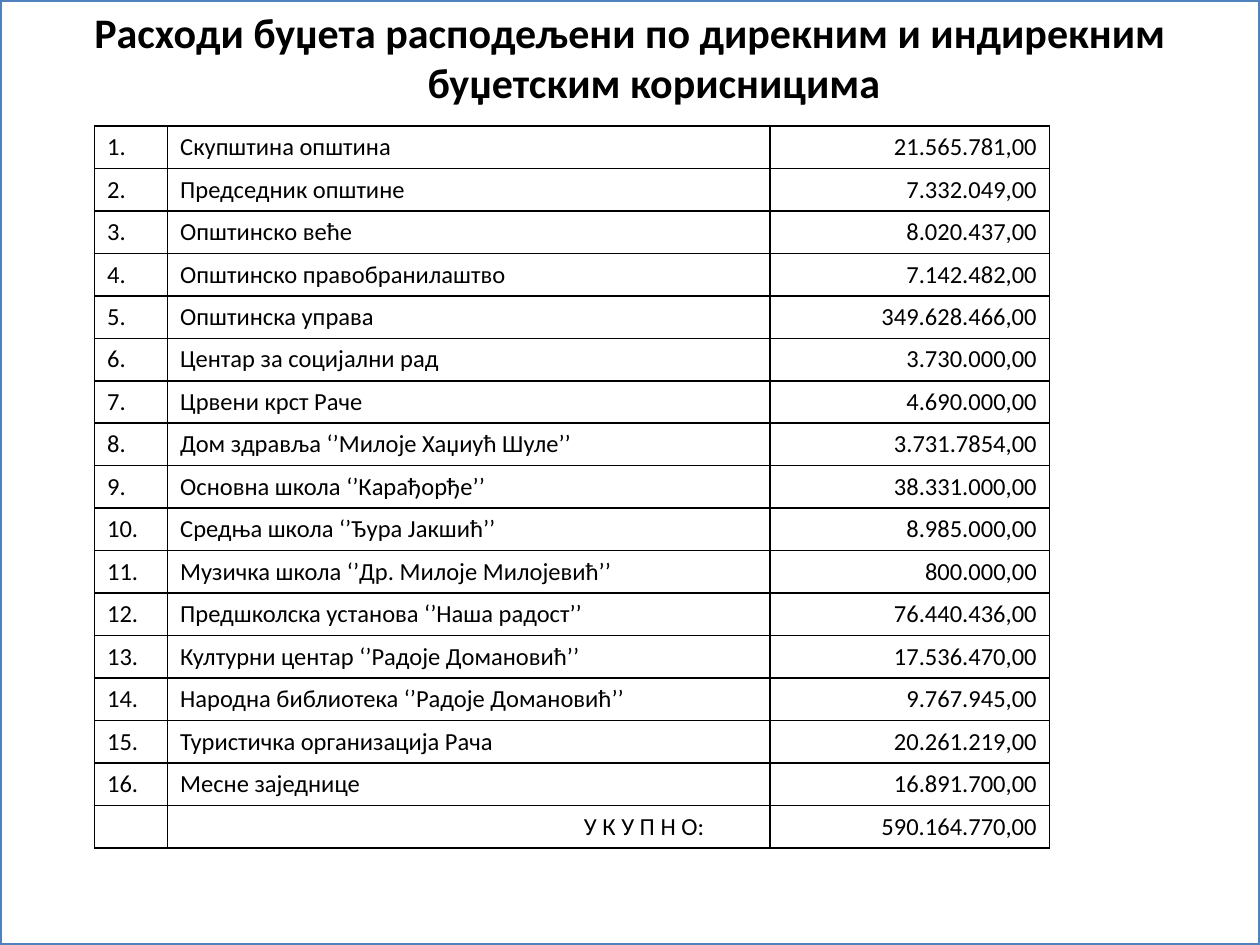
from dataclasses import dataclass

from lxml.etree import SubElement
from pptx import Presentation
from pptx.dml.color import RGBColor
from pptx.enum.shapes import MSO_SHAPE
from pptx.enum.text import MSO_ANCHOR, PP_ALIGN
from pptx.oxml.ns import qn
from pptx.util import Inches, Pt


@dataclass(frozen=True)
class Theme:
    font: str = "Calibri"
    ink: str = "000000"
    paper: str = "FFFFFF"
    frame: str = "4F81BD"
    title_size: int = 24
    cell_size: int = 14
    frame_width: int = 2
    rule_width: int = 1


THEME = Theme()
SLIDE_W, SLIDE_H = Inches(10), Inches(7.5)
TABLE_LEFT, TABLE_TOP = Inches(0.75), Inches(1)
COLUMNS = [Inches(w) for w in (0.58, 4.78, 2.22)]
ROW_H = Inches(0.33)
HANGING = Inches(0.38)
TOTAL_INSET = Inches(0.52)

TITLE = "Расходи буџета расподељени по дирекним и индирекним буџетским корисницима"
TOTAL = ("У К У П Н О:", "590.164.770,00")
EXPENSES = [
    ("Скупштина општина", "21.565.781,00"),
    ("Председник општине", "7.332.049,00"),
    ("Општинско веће", "8.020.437,00"),
    ("Општинско правобранилаштво", "7.142.482,00"),
    ("Општинска управа", "349.628.466,00"),
    ("Центар за социјални рад", "3.730.000,00"),
    ("Црвени крст Раче", "4.690.000,00"),
    ("Дом здравља ‘’Милоје Хаџиућ Шуле’’", "3.731.7854,00"),
    ("Основна школа ‘’Карађорђе’’", "38.331.000,00"),
    ("Средња школа ‘’Ђура Јакшић’’", "8.985.000,00"),
    ("Музичка школа ‘’Др. Милоје Милојевић’’", "800.000,00"),
    ("Предшколска установа ‘’Наша радост’’", "76.440.436,00"),
    ("Културни центар ‘’Радоје Домановић’’", "17.536.470,00"),
    ("Народна библиотека ‘’Радоје Домановић’’", "9.767.945,00"),
    ("Туристичка организација Рача", "20.261.219,00"),
    ("Месне заједнице", "16.891.700,00"),
]


def rgb(value):
    return RGBColor.from_string(value)


def style_text(p, size, align, bold=False):
    p.alignment = align
    p.font.name = THEME.font
    p.font.size = Pt(size)
    p.font.bold = bold
    p.font.color.rgb = rgb(THEME.ink)
    for r in p.runs:
        r.font.name = THEME.font
        r.font.size = Pt(size)
        r.font.bold = bold
        r.font.color.rgb = rgb(THEME.ink)


def add_framed_title(s):
    """Add the slide-wide frame that holds the title at its top."""
    sp = s.shapes.add_shape(MSO_SHAPE.RECTANGLE, 0, 0, SLIDE_W, SLIDE_H)
    sp.shadow.inherit = False
    sp.fill.solid()
    sp.fill.fore_color.rgb = rgb(THEME.paper)
    sp.line.color.rgb = rgb(THEME.frame)
    sp.line.width = Pt(THEME.frame_width)
    tf = sp.text_frame
    tf.word_wrap = True
    tf.vertical_anchor = MSO_ANCHOR.TOP
    tf.text = TITLE
    p = tf.paragraphs[0]
    pPr = p._p.get_or_add_pPr()
    pPr.set("marL", str(HANGING))
    pPr.set("indent", str(-HANGING))
    style_text(p, THEME.title_size, PP_ALIGN.CENTER, bold=True)


def set_borders(cell):
    tcPr = cell._tc.get_or_add_tcPr()
    for side in ("a:lnL", "a:lnR", "a:lnT", "a:lnB"):
        ln = SubElement(tcPr, qn(side), w=str(Pt(THEME.rule_width)))
        fill = SubElement(ln, qn("a:solidFill"))
        SubElement(fill, qn("a:srgbClr"), val=THEME.ink)


def fill_cell(cell, text, align):
    set_borders(cell)
    cell.fill.background()
    cell.text = text
    style_text(cell.text_frame.paragraphs[0], THEME.cell_size, align)


def add_expense_table(s):
    rows = [(f"{n}.", *expense) for n, expense in enumerate(EXPENSES, 1)]
    rows.append(("", *TOTAL))
    frame = s.shapes.add_table(len(rows), len(COLUMNS), TABLE_LEFT, TABLE_TOP,
                               sum(COLUMNS), ROW_H * len(rows))
    table = frame.table
    table.first_row = table.horz_banding = False
    for column, width in zip(table.columns, COLUMNS):
        column.width = width
    aligns = (PP_ALIGN.LEFT, PP_ALIGN.LEFT, PP_ALIGN.RIGHT)
    for i, row in enumerate(rows):
        table.rows[i].height = ROW_H
        for j, (text, align) in enumerate(zip(row, aligns)):
            fill_cell(table.cell(i, j), text, align)
    total = table.cell(len(rows) - 1, 1)
    total.margin_right = TOTAL_INSET
    total.text_frame.paragraphs[0].alignment = PP_ALIGN.RIGHT


def main():
    prs = Presentation()
    prs.slide_width, prs.slide_height = SLIDE_W, SLIDE_H
    s = prs.slides.add_slide(prs.slide_layouts[6])
    add_framed_title(s)
    add_expense_table(s)
    prs.save("out.pptx")


if __name__ == "__main__":
    main()
